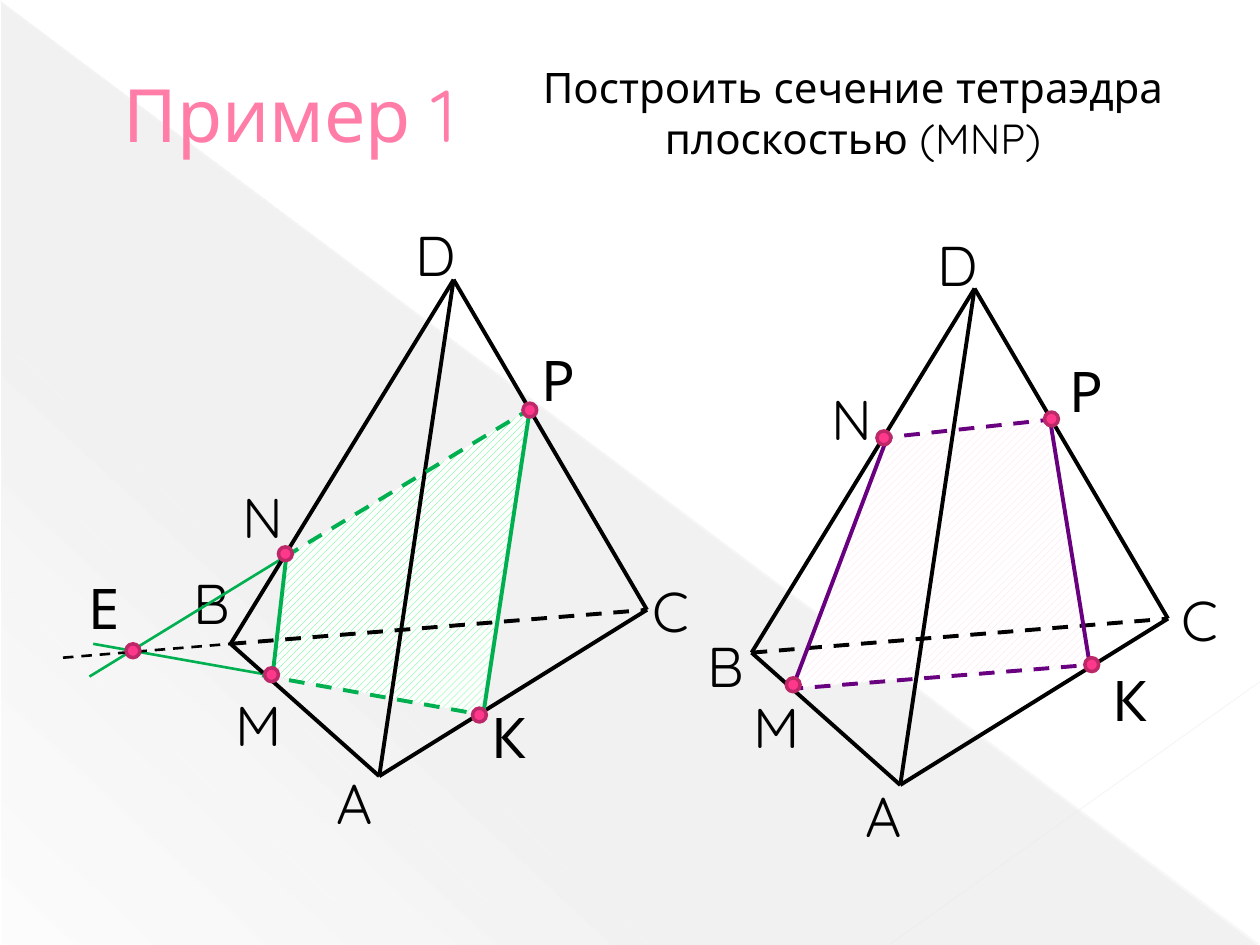
from dataclasses import dataclass

from lxml.etree import SubElement
from pptx import Presentation
from pptx.dml.color import RGBColor
from pptx.enum.dml import MSO_LINE, MSO_PATTERN
from pptx.enum.shapes import MSO_CONNECTOR, MSO_SHAPE
from pptx.enum.text import MSO_ANCHOR, MSO_AUTO_SIZE, PP_ALIGN
from pptx.oxml import parse_xml
from pptx.oxml.ns import nsdecls, qn
from pptx.util import Inches, Pt


@dataclass(frozen=True)
class Theme:
    font: str = "Quicksand"
    title_size: float = 42
    task_size: float = 24
    label_size: float = 32
    edge_width: float = 2.25
    thin_width: float = 1.5
    dot_line: float = 2
    ink: str = "000000"
    pink: str = "FF7DA7"
    green: str = "00B050"
    purple: str = "68007F"
    dot: str = "FF388C"
    dot_rim: str = "BD2968"
    green_hatch: str = "3BFD6E"
    pink_hatch: str = "FFD7E8"
    white: str = "FFFFFF"
    grey: str = "666666"
    long_line: str = "E8E8E8"
    short_line: str = "EAEAEA"


def rgb(value):
    return RGBColor.from_string(value)


class Board:
    """Current slide and its style; lengths are cells of a 100 x 75 grid."""
    COLUMNS, ROWS = 100, 75
    DOT = 1.1

    def __init__(self, prs, theme):
        self.t = theme
        self.s = prs.slides.add_slide(prs.slide_layouts[5])
        self.col = prs.slide_width / self.COLUMNS
        self.row = prs.slide_height / self.ROWS

    def place(self, *cells):
        return [round(c * (self.row if i % 2 else self.col)) for i, c in enumerate(cells)]

    def add_text_run(self, p, text, size, color):
        r = p.add_run()
        r.text = text
        r.font.name, r.font.size = self.t.font, Pt(size)
        r.font.color.rgb = rgb(color)

    def title(self, text, box, indent):
        sp = self.s.shapes.title
        sp.left, sp.top, sp.width, sp.height = self.place(*box)
        self.s.shapes._spTree.append(sp._element)  # in front of the backdrop
        tf = sp.text_frame
        tf.vertical_anchor = MSO_ANCHOR.MIDDLE
        p = tf.paragraphs[0]
        p.alignment = PP_ALIGN.LEFT
        pPr = p._p.get_or_add_pPr()
        pPr.set("marL", str(self.place(indent)[0]))
        pPr.set("indent", "0")
        self.add_text_run(p, text, self.t.title_size, self.t.pink)

    def text(self, text, x, y, w=4.4, h=6.4, size=None, align=PP_ALIGN.LEFT):
        tf = self.s.shapes.add_textbox(*self.place(x, y, w, h)).text_frame
        tf.word_wrap = True
        tf.auto_size = MSO_AUTO_SIZE.SHAPE_TO_FIT_TEXT
        p = tf.paragraphs[0]
        p.alignment = align
        self.add_text_run(p, text, size or self.t.label_size, self.t.ink)

    def line(self, start, end, color=None, width=None, dash=False, alpha=None):
        c = self.s.shapes.add_connector(MSO_CONNECTOR.STRAIGHT, *self.place(*start, *end))
        c.line.color.rgb = rgb(color or self.t.ink)
        c.line.width = Pt(width or self.t.edge_width)
        c.line.dash_style = MSO_LINE.DASH if dash else MSO_LINE.SOLID
        spPr = c._element.spPr
        if alpha:
            clr = spPr.find(".//" + qn("a:srgbClr"))
            SubElement(clr, qn("a:alpha")).set("val", str(alpha * 1000))
        SubElement(spPr, qn("a:effectLst"))

    def section(self, points, hatch):
        pts = [self.place(*p) for p in points]
        fb = self.s.shapes.build_freeform(*pts[0])
        fb.add_line_segments(pts[1:], close=True)
        sp = fb.convert_to_shape()
        sp.shadow.inherit = False
        sp.line.fill.background()
        sp.fill.patterned()
        sp.fill.pattern = MSO_PATTERN.WIDE_UPWARD_DIAGONAL
        sp.fill.fore_color.rgb = rgb(hatch)
        sp.fill.back_color.rgb = rgb(self.t.white)

    def dot(self, x, y):
        sp = self.s.shapes.add_shape(
            MSO_SHAPE.OVAL, *self.place(x - self.DOT / 2, y - self.DOT / 2, self.DOT, self.DOT))
        sp.shadow.inherit = False
        sp.fill.solid()
        sp.fill.fore_color.rgb = rgb(self.t.dot)
        sp.line.color.rgb = rgb(self.t.dot_rim)
        sp.line.width = Pt(self.t.dot_line)

    def faded_triangle(self, box, stops, angle):
        sp = self.s.shapes.add_shape(MSO_SHAPE.RIGHT_TRIANGLE, *self.place(*box))
        sp.shadow.inherit = False
        sp.line.fill.background()
        gs = "".join(
            f'<a:gs pos="{pos * 1000}"><a:srgbClr val="{self.t.grey}">'
            f'<a:alpha val="{alpha * 1000}"/></a:srgbClr></a:gs>' for pos, alpha in stops)
        sp._element.spPr.find(qn("a:prstGeom")).addnext(parse_xml(
            f'<a:gradFill {nsdecls("a")} rotWithShape="1"><a:gsLst>{gs}</a:gsLst>'
            f'<a:lin ang="{angle * 60000}" scaled="0"/></a:gradFill>'))

    def tetrahedron(self, dx=0, dy=0):
        a, b, c, d = ((x + dx, y + dy) for x, y in
                      ((30.1, 61.6), (18.3, 51.1), (51.35, 48.4), (36, 22.2)))
        self.line(b, c, dash=True)
        for start, end in ((a, d), (c, d), (b, a), (a, c), (b, d)):
            self.line(start, end)


def main():
    prs = Presentation()
    prs.slide_width, prs.slide_height = Inches(10), Inches(7.5)
    t = Theme()
    b = Board(prs, t)

    # Backdrop
    b.faded_triangle((0.1, 0.2, 99.8, 74.8), ((0, 10), (70, 8), (100, 1)), 133)
    b.line((0, 0.1), (99.9, 74.9), t.long_line, 0.39, alpha=35)
    b.line((100, 54.1), (70.7, 74.9), t.short_line, 0.47, alpha=45)

    # Shaded sections
    b.section(((83.2, 33), (83.2, 35), (86.4, 52.8), (62.8, 54.6), (70.2, 34.9)), t.pink_hatch)
    b.section(((42, 32.5), (42, 33), (38.1, 56.7), (21.5, 53.6), (22.6, 44.2)), t.green_hatch)

    # Title and task
    b.title("Пример 1", (3.5, 1.3, 93, 15.3), 5.3)
    b.text("Построить сечение тетраэдра плоскостью (MNP)", 39.9, 4.4, 55.6, 9.1,
           t.task_size, PP_ALIGN.CENTER)

    # Left figure: the section found through the auxiliary point E
    b.text("B", 14.4, 44.6)
    for start, end in (((7.4, 51.1), (21.5, 53.6)), ((7.1, 53.7), (22.6, 44.2))):
        b.line(start, end, t.green, t.thin_width)
    b.line((5, 52.2), (18.3, 51.1), width=t.thin_width, dash=True)
    b.tetrahedron()

    # Right figure: the same tetrahedron, shifted
    b.tetrahedron(41.35, 0.7)

    # Section sides: start, end, colour, dashed
    for start, end, color, dash in (
        ((42, 32.8), (38.4, 56.4), t.green, False),
        ((22.7, 44.4), (21.6, 53.9), t.green, False),
        ((22.6, 44.2), (42, 32.5), t.green, True),
        ((20.8, 53.6), (38.1, 56.7), t.green, True),
        ((83.4, 33.7), (86.4, 52.2), t.purple, False),
        ((70.2, 35.3), (62.9, 54.6), t.purple, False),
        ((69.6, 34.8), (83.4, 33.3), t.purple, True),
        ((62.5, 54.7), (86.1, 52.8), t.purple, True),
    ):
        b.line(start, end, color, dash=dash)

    # Points of the sections
    for x, y in ((22.65, 43.95), (21.55, 53.55), (42.05, 32.55), (38.05, 56.75), (10.55, 51.65),
                 (70.15, 34.75), (62.95, 54.35), (83.45, 33.25), (86.65, 52.75)):
        b.dot(x, y)

    # Letters: text, left, top, width where wider
    for label in (
        ("A", 25.7, 60.5), ("C", 50.8, 45.3), ("D", 32, 17), ("M", 17.7, 54.3),
        ("N", 18.3, 37.8, 6.9), ("Р", 42, 26.9, 6.9), ("Е", 6, 45, 6.9), ("К", 38, 55.3, 6.9),
        ("B", 55.2, 49.6), ("A", 67.7, 61.5), ("C", 92.8, 46), ("D", 73.4, 17.8),
        ("M", 58.8, 54.5), ("N", 65, 30, 6.9), ("Р", 83.9, 27.8, 5.6), ("К", 87.3, 52.3, 5.4),
    ):
        b.text(*label)

    prs.save("out.pptx")


if __name__ == "__main__":
    main()
